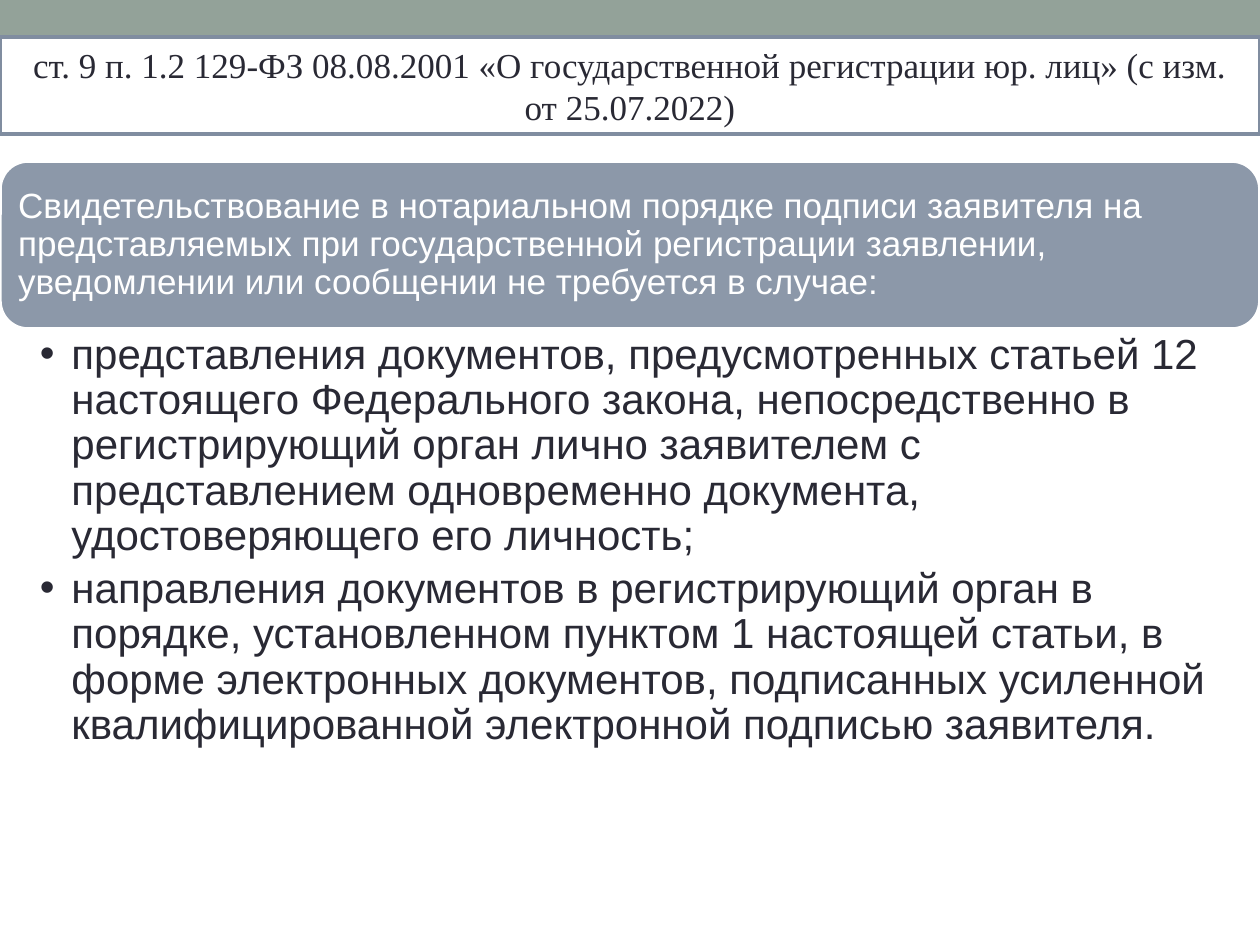
"""Build a slide on notarial certification of an applicant's signature."""
from dataclasses import dataclass
from typing import Optional

from lxml import etree
from pptx import Presentation
from pptx import util as u
from pptx.dml.color import RGBColor
from pptx.enum import shapes, text
from pptx.oxml import ns

PX_PER_INCH = 126
SAGE = RGBColor(0x93, 0xA2, 0x99)
SLATE = RGBColor(0x80, 0x8D, 0xA0)
WHITE = RGBColor(0xFF, 0xFF, 0xFF)
INK = RGBColor(0x29, 0x29, 0x34)

TITLE = "ст. 9 п. 1.2 129-ФЗ 08.08.2001 «О государственной регистрации юр. лиц» (с изм. от 25.07.2022)"
LEAD = ("Свидетельствование в нотариальном порядке подписи заявителя на представляемых "
        "при государственной регистрации заявлении, уведомлении или сообщении не требуется в случае:")
CASES = [
    "представления документов, предусмотренных статьей 12 настоящего Федерального закона, "
    "непосредственно в регистрирующий орган лично заявителем с представлением одновременно "
    "документа, удостоверяющего его личность;",
    "направления документов в регистрирующий орган в порядке, установленном пунктом 1 настоящей "
    "статьи, в форме электронных документов, подписанных усиленной квалифицированной "
    "электронной подписью заявителя.",
]


@dataclass
class Box:
    """Place and colours of a shape, in px."""
    left: int
    top: int
    width: int
    height: int
    fill: Optional[RGBColor] = None
    line: Optional[RGBColor] = None
    alpha: int = 100


@dataclass
class TextStyle:
    """Formatting shared by all the text of one shape."""
    frame: dict
    paragraph: dict
    font: dict
    color: RGBColor
    bulleted: bool = False


def px(n: int) -> int:
    """Turn px into EMU."""
    return round(n * u.Inches(1) / PX_PER_INCH)


def assign(target, values: dict) -> None:
    """Set every attribute named in values."""
    for name, value in values.items():
        setattr(target, name, value)


def format_box(sp, box: Box) -> None:
    """Place a shape and colour its fill and line."""
    assign(sp, {k: px(getattr(box, k)) for k in ("left", "top", "width", "height")})
    if box.fill is not None:
        sp.fill.solid()
        sp.fill.fore_color.rgb = box.fill
    if box.alpha < 100:
        clr = next(sp.element.iter(ns.qn("a:srgbClr")))
        etree.SubElement(clr, ns.qn("a:alpha"), val=str(box.alpha * 1000))
    if box.line is None:
        sp.line.fill.background()
    else:
        sp.line.color.rgb = box.line
        sp.line.width = u.Pt(2.08)


def add_box(s, kind: shapes.MSO_SHAPE, box: Box):
    """Add a preset shape without a shadow."""
    sp = s.shapes.add_shape(kind, 0, 0, 0, 0)
    sp.shadow.inherit = False
    format_box(sp, box)
    return sp


def add_bullet(p) -> None:
    """Give a paragraph a hanging round bullet."""
    pPr = p._p.get_or_add_pPr()
    pPr.set("marL", str(u.Inches(0.25)))
    pPr.set("indent", str(-u.Inches(0.25)))
    etree.SubElement(pPr, ns.qn("a:buFont"), typeface="Arial")
    etree.SubElement(pPr, ns.qn("a:buChar"), char="•")


def write(sp, lines: list[str], style: TextStyle) -> None:
    """Write one paragraph for each line."""
    tf = sp.text_frame
    assign(tf, {"word_wrap": True, "auto_size": text.MSO_AUTO_SIZE.NONE, **style.frame})
    for i, line in enumerate(lines):
        p = tf.add_paragraph() if i else tf.paragraphs[0]
        assign(p, {"space_before": u.Pt(0), **style.paragraph})
        if style.bulleted:
            add_bullet(p)
        r = p.add_run()
        r.text = line
        assign(r.font, style.font)
        r.font.color.rgb = style.color


def margins(left: int, top: int, right: int, bottom: int) -> dict:
    """Name the four text insets, given in px."""
    sides = zip(("left", "top", "right", "bottom"), (left, top, right, bottom))
    return {f"margin_{side}": px(n) for side, n in sides}


TITLE_STYLE = TextStyle(
    {"vertical_anchor": text.MSO_ANCHOR.TOP},
    {"alignment": text.PP_ALIGN.CENTER},
    {"size": u.Pt(20), "name": "Times New Roman"}, INK)
LEAD_STYLE = TextStyle(
    {"vertical_anchor": text.MSO_ANCHOR.MIDDLE, **margins(10, 10, 10, 10)},
    {"alignment": text.PP_ALIGN.LEFT, "line_spacing": 0.9},
    {"size": u.Pt(20), "name": "Arial"}, WHITE)
CASES_STYLE = TextStyle(
    {"vertical_anchor": text.MSO_ANCHOR.TOP, **margins(40, 4, 24, 4)},
    {"level": 1, "line_spacing": 0.9, "space_after": u.Pt(4.3)},
    {"size": u.Pt(24), "name": "Arial"}, INK, bulleted=True)


def main() -> None:
    """Build and save the slide."""
    prs = Presentation()
    assign(prs, {"slide_width": px(1260), "slide_height": px(945)})
    s = prs.slides.add_slide(prs.slide_layouts[1])
    title, body = s.shapes.title, s.placeholders[1]

    band = add_box(s, shapes.MSO_SHAPE.RECTANGLE, Box(0, 0, 1260, 50, SAGE))
    lead = add_box(s, shapes.MSO_SHAPE.ROUNDED_RECTANGLE,
                   Box(0, 161, 1260, 168, SLATE, WHITE, alpha=90))
    write(lead, [LEAD], LEAD_STYLE)

    format_box(body, Box(0, 329, 1260, 455))
    write(body, CASES, CASES_STYLE)

    format_box(title, Box(0, 37, 1260, 97, WHITE, SLATE))
    write(title, [TITLE], TITLE_STYLE)
    band.element.getparent().append(title.element)

    prs.save("out.pptx")


if __name__ == "__main__":
    main()
